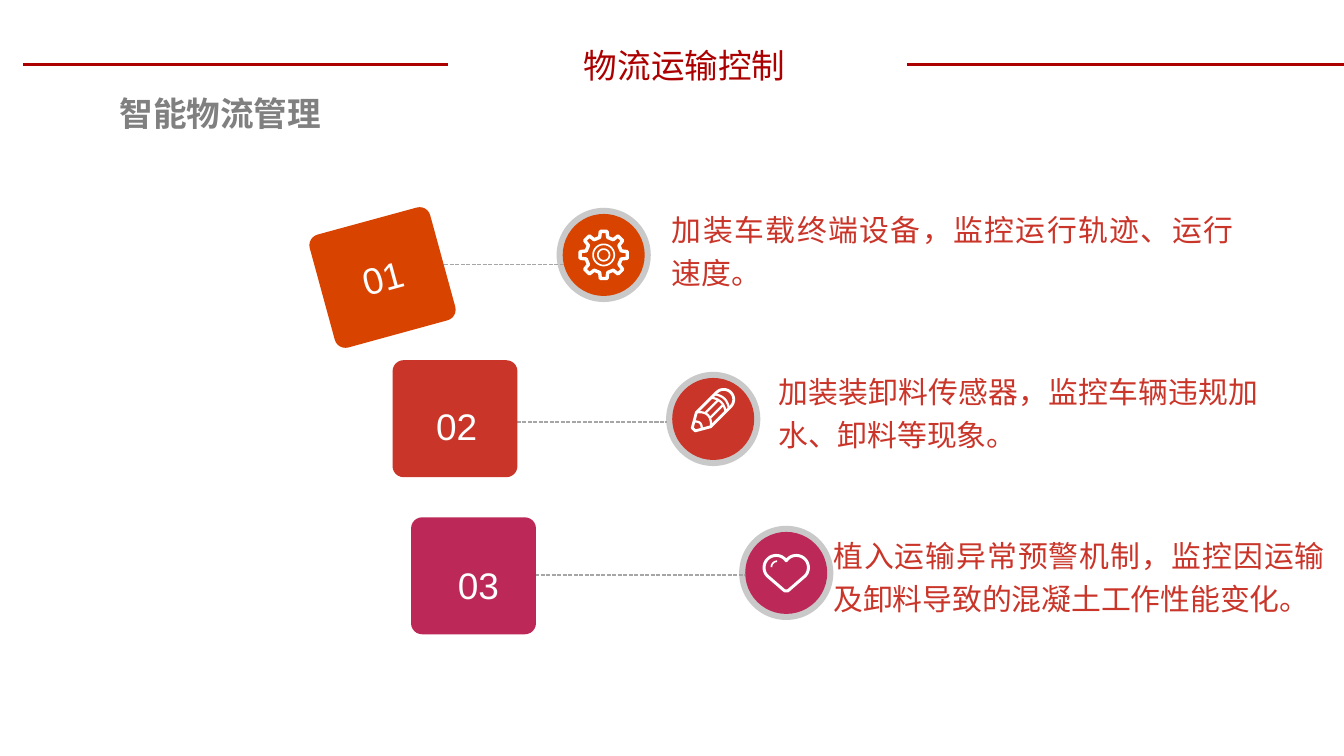
from dataclasses import dataclass
from math import cos, radians, sin, sqrt

from lxml import etree
from pptx import Presentation
from pptx.dml.color import RGBColor
from pptx.enum.dml import MSO_LINE
from pptx.enum.shapes import MSO_CONNECTOR, MSO_SHAPE
from pptx.enum.text import MSO_ANCHOR, MSO_AUTO_SIZE, PP_ALIGN
from pptx.oxml.ns import qn
from pptx.util import Cm, Pt

STRAIGHT = MSO_CONNECTOR.STRAIGHT
ROUNDED, OVAL = MSO_SHAPE.ROUNDED_RECTANGLE, MSO_SHAPE.OVAL
DASHED = MSO_LINE.SQUARE_DOT
LEFT, CENTER, JUSTIFY = PP_ALIGN.LEFT, PP_ALIGN.CENTER, PP_ALIGN.JUSTIFY
TOP, NO_FIT = MSO_ANCHOR.TOP, MSO_AUTO_SIZE.NONE


@dataclass(frozen=True)
class Theme:
    heading: str = "AC0000"
    subheading: str = "808080"
    text: str = "CA352A"
    grey: str = "A6A6A6"
    white: str = "FFFFFF"
    orange: str = "D94300"
    red: str = "CA352A"
    magenta: str = "BC2958"
    latin_font: str = "Arial"
    chinese_font: str = "Noto Sans CJK SC"
    heading_size: float = 18
    number_size: float = 19.8
    text_size: float = 16


def apply_format(target, values):
    for name, value in values.items():
        setattr(target, name, value)


def arc(center_x, center_y, radius, start, end, steps=20):
    """Points along an arc; degrees run clockwise from the right."""
    angles = [radians(start + (end - start) * step / steps) for step in range(steps + 1)]
    return [(center_x + radius * cos(a), center_y + radius * sin(a)) for a in angles]


class SlideBuilder:
    def __init__(self, slide, theme):
        self.slide, self.theme = slide, theme

    def line(self, start_x, end_x, y, color, weight, dash=None):
        connector = self.slide.shapes.add_connector(STRAIGHT, Cm(start_x), Cm(y), Cm(end_x), Cm(y))
        connector.line.color.rgb = RGBColor.from_string(color)
        apply_format(connector.line, {"width": Pt(weight), "dash_style": dash})
        etree.SubElement(connector._element.spPr, qn("a:effectLst"))

    def filled(self, kind, left, top, width, height, color):
        shape = self.slide.shapes.add_shape(kind, Cm(left), Cm(top), Cm(width), Cm(height))
        shape.shadow.inherit = False
        shape.fill.solid()
        shape.fill.fore_color.rgb = RGBColor.from_string(color)
        shape.line.fill.background()
        return shape

    def tile(self, left, top, color, rotation):
        shape = self.filled(ROUNDED, left, top, 2.36, 2.21, color)
        shape.adjustments[0] = 0.094
        shape.rotation = rotation

    def disc(self, center, diameter, color, opacity=100):
        left, top = (position - diameter / 2 for position in center)
        shape = self.filled(OVAL, left, top, diameter, diameter, color)
        if opacity < 100:
            color_element = shape.fill._xPr.find(qn("a:solidFill"))[0]
            etree.SubElement(color_element, qn("a:alpha"), val=str(opacity * 1000))

    def outline(self, center, points, weight, closed=False):
        """Draw a white stroke through points given in cm from the center."""
        places = [(Cm(center[0] + x), Cm(center[1] + y)) for x, y in points]
        builder = self.slide.shapes.build_freeform(*places[0], scale=1.0)
        builder.add_line_segments(places[1:], close=closed)
        shape = builder.convert_to_shape()
        shape.shadow.inherit = False
        shape.fill.background()
        shape.line.color.rgb = RGBColor.from_string(self.theme.white)
        shape.line.width = Pt(weight)

    def set_text(self, shape, box, text, size, color, alignment, font=None, spacing=1.0,
                 inset=(0.25, 0.13), bold=False, rotation=0):
        apply_format(shape, dict(zip(("left", "top", "width", "height"), map(Cm, box))))
        shape.rotation = rotation
        frame = shape.text_frame
        frame.text = text
        across, down = map(Cm, inset)
        apply_format(frame, {
            "word_wrap": True, "auto_size": NO_FIT, "vertical_anchor": TOP,
            "margin_left": across, "margin_right": across,
            "margin_top": down, "margin_bottom": down,
        })
        paragraph = frame.paragraphs[0]
        apply_format(paragraph, {
            "alignment": alignment, "line_spacing": spacing,
            "space_before": Pt(0), "space_after": Pt(0),
        })
        run = paragraph.runs[0]
        apply_format(run.font, {"name": font or self.theme.latin_font,
                                "size": Pt(size), "bold": bold})
        run.font.color.rgb = RGBColor.from_string(color)
        latin = run.font._element.find(qn("a:latin"))
        latin.addnext(latin.makeelement(qn("a:ea"), {"typeface": self.theme.chinese_font}))
        return paragraph

    def text_box(self, box, *values, **options):
        shape = self.slide.shapes.add_textbox(*map(Cm, box))
        return self.set_text(shape, box, *values, **options)

    def gear(self, center):
        corners = []
        for tooth in range(0, 360, 45):
            for offset, radius in ((-13, 0.34), (-8, 0.45), (8, 0.45), (13, 0.34)):
                angle = radians(tooth + offset)
                corners.append((radius * cos(angle), radius * sin(angle)))
        self.outline(center, corners, 1.8, closed=True)
        for radius in (0.2, 0.11):
            self.outline(center, arc(0, 0, radius, 0, 360, 40)[:-1], 0.9, closed=True)

    def pencil(self, center):
        def tilt(points):
            """Turn (along, across) positions so the tip points down left."""
            return [((u + v) / sqrt(2), (v - u) / sqrt(2)) for u, v in points]

        def bow(edge, half_width, depth):
            steps = [step / 6 for step in range(-6, 7)]
            return [(edge + depth * (1 - s * s), half_width * s) for s in steps]

        middle = (center[0], center[1] - 0.17)
        half = 0.19
        body = [(-0.52, -0.04), (-0.26, -half), *arc(0.28, 0, half, -90, 90),
                (-0.26, half), (-0.52, 0.04)]
        self.outline(middle, tilt(body), 1.5, closed=True)
        for edge, half_width, depth in ((-0.25, half, 0.11), (-0.41, 0.1, 0.06),
                                        (0.14, half, 0.07), (0.23, half, 0.07)):
            self.outline(middle, tilt(bow(edge, half_width, depth)), 1.2)
        for across in (-0.065, 0.065):
            self.outline(middle, tilt([(-0.14, across), (0.2, across)]), 1.2)

    def heart(self, center):
        right = arc(0.19, -0.1, 0.23, 214, 405)
        left = [(-x, y) for x, y in reversed(right)]
        self.outline(center, [*right, (0.03, 0.34), (-0.03, 0.34), *left[:-1]], 1.6, closed=True)
        self.outline(center, arc(-0.17, -0.11, 0.11, 180, 270), 0.9)


def main():
    theme = Theme()
    presentation = Presentation()
    apply_format(presentation, {"slide_width": Cm(25.4), "slide_height": Cm(14.29)})
    slide = presentation.slides.add_slide(presentation.slide_layouts[1])
    builder = SlideBuilder(slide, theme)

    title, subtitle = slide.placeholders
    builder.set_text(title, (8.99, 0.71, 7.9, 1.02), "物流运输控制", theme.heading_size,
                     theme.heading, CENTER, font=theme.chinese_font)
    paragraph = builder.set_text(subtitle, (1.27, 1.63, 12.24, 1.02), "智能物流管理",
                                 theme.heading_size, theme.subheading, LEFT,
                                 font=theme.chinese_font, bold=True)
    properties = paragraph._p.get_or_add_pPr()
    properties.set("marL", "0")
    properties.set("indent", str(Cm(0.74)))
    etree.SubElement(properties, qn("a:buNone"))
    for start_x, end_x in ((0.43, 8.46), (17.15, 25.4)):
        builder.line(start_x, end_x, 1.22, theme.heading, 2)

    # color, tile, rotation, number place, dashes (from, to, y), disc center, icon, text box, text
    steps = [
        (theme.orange, (6.05, 4.14), 344.7, (6.45, 4.52), (7.77, 11.33, 5), (11.41, 4.82),
         builder.gear, (12.7, 3.86, 10.62, 1.85), "加装车载终端设备，监控运行轨迹、运行速度。"),
        (theme.red, (7.42, 6.81), 0, (7.87, 7.34), (9.04, 12.6, 7.98), (13.48, 7.92),
         builder.pencil, (14.71, 6.93, 9.09, 1.65), "加装装卸料传感器，监控车辆违规加水、卸料等现象。"),
        (theme.magenta, (7.77, 9.78), 0, (8.28, 10.34), (9.8, 14.07, 10.87), (14.86, 10.83),
         builder.heart, (15.75, 10.03, 9.3, 1.65),
         "植入运输异常预警机制，监控因运输及卸料导致的混凝土工作性能变化。"),
    ]
    for number, step in enumerate(steps, 1):
        color, tile, rotation, number_place, dashes, center, draw_icon, box, text = step
        builder.line(*dashes, theme.grey, 0.75, DASHED)
        builder.tile(*tile, color, rotation)
        builder.text_box((*number_place, 1.52, 1.27), f"{number:02}", theme.number_size,
                         theme.white, CENTER, spacing=1.2, rotation=rotation)
        builder.disc(center, 1.78, theme.grey, opacity=60)
        builder.disc(center, 1.55, color)
        draw_icon(center)
        builder.text_box(box, text, theme.text_size, theme.text, JUSTIFY,
                         spacing=1.2, inset=(0, 0))
    presentation.save("out.pptx")


if __name__ == "__main__":
    main()
